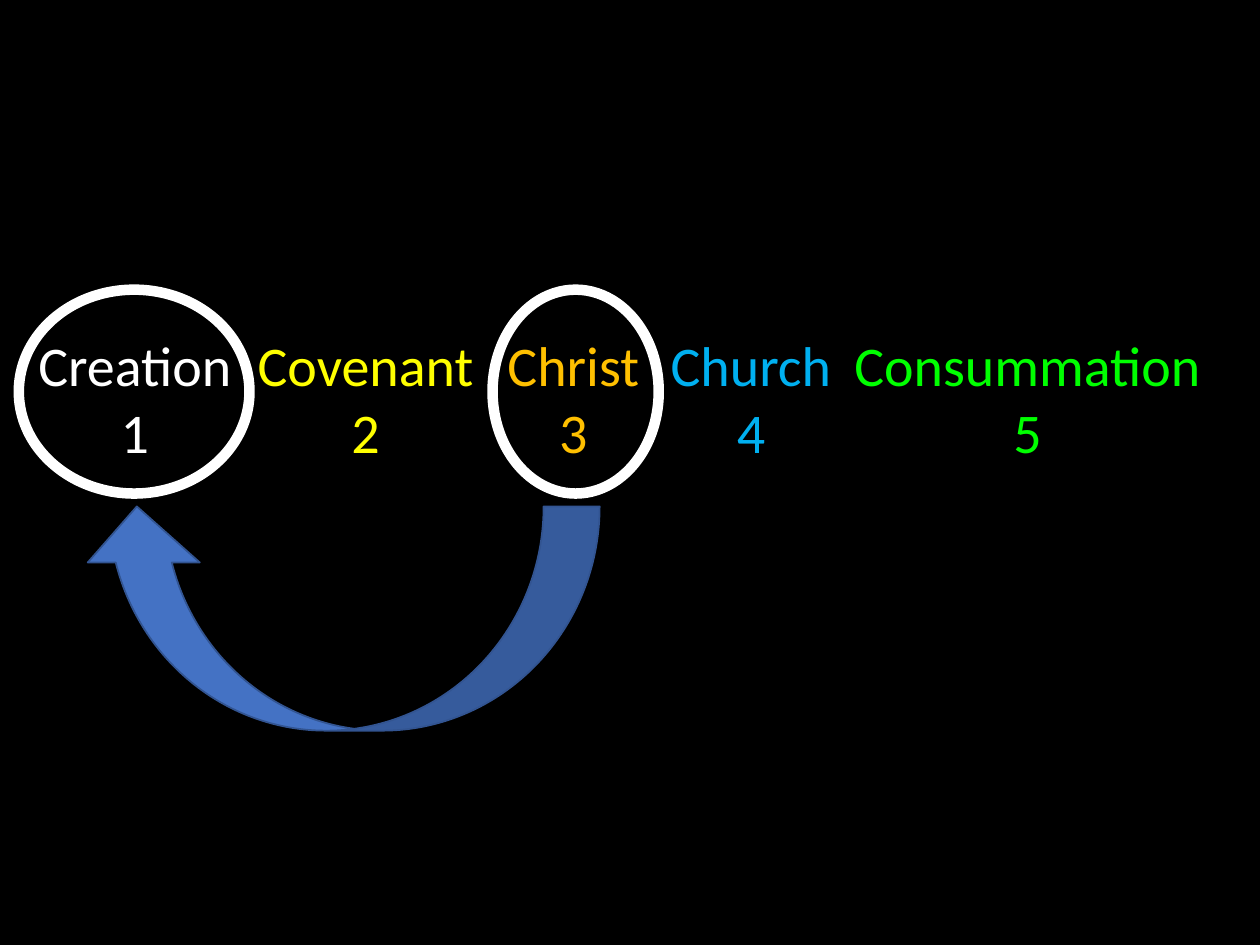
"""Build a slide of five themes, with an arrow from Christ back to Creation."""
from pptx import Presentation
from pptx.dml.color import RGBColor as RGB
from pptx.enum.shapes import MSO_SHAPE as Kind
from pptx.enum.text import MSO_AUTO_SIZE as Fit, PP_ALIGN as Align
from pptx.oxml.ns import qn
from pptx.util import Cm, Pt

BLACK = RGB(0x00, 0x00, 0x00)
WHITE = RGB(0xFF, 0xFF, 0xFF)
YELLOW = RGB(0xFF, 0xFF, 0x00)
GOLD = RGB(0xFF, 0xC0, 0x00)
SKY = RGB(0x00, 0xB0, 0xF0)
GREEN = RGB(0x00, 0xFF, 0x00)
BLUE = RGB(0x44, 0x72, 0xC4)
NAVY = RGB(0x32, 0x54, 0x91)

THEMES = [
    ("Creation", 0, 5.44, WHITE),
    ("Covenant", 4.65, 5.44, YELLOW),
    ("Christ", 8.84, 5.44, GOLD),
    ("Church", 12.42, 5.44, SKY),
    ("Consummation", 16.89, 7.65, GREEN),
]
TOP, HIGH = 6.53, 3
CHRIST = (9.93, 5.84, 3.35, 4.11)
ARROW = (1.63, 10.21, 10.46, 4.52)
START = (0.38, 5.84, 4.65, 4.11)


def write(slide, lines, area, color, size=32, font="Calibri"):
    box = slide.shapes.add_textbox(*map(Cm, area))
    frame = box.text_frame
    frame.word_wrap = True
    frame.auto_size = Fit.SHAPE_TO_FIT_TEXT
    frame.text = "\n".join(lines)
    for para in frame.paragraphs:
        para.alignment = Align.CENTER
        for run in para.runs:
            run.font.name = font
            run.font.size = Pt(size)
            run.font.color.rgb = color


def draw(slide, kind, area, line, width, fill=None):
    shape = slide.shapes.add_shape(kind, *map(Cm, area))
    shape.shadow.inherit = False
    if fill is None:
        shape.fill.background()
    else:
        shape.fill.solid()
        shape.fill.fore_color.rgb = fill
    shape.line.color.rgb = line
    shape.line.width = Pt(width)
    return shape


def main():
    deck = Presentation()
    deck.slide_width, deck.slide_height = Cm(25.4), Cm(19.05)
    slide = deck.slides.add_slide(deck.slide_layouts[6])
    back = slide.background.fill
    back.solid()
    back.fore_color.rgb = BLACK

    for num, (name, left, wide, color) in enumerate(THEMES, 1):
        write(slide, [name, str(num)], (left, TOP, wide, HIGH), color)

    draw(slide, Kind.OVAL, CHRIST, WHITE, 6)
    arrow = draw(slide, Kind.CURVED_UP_ARROW, ARROW, NAVY, 1, fill=BLUE)
    arrow.element.spPr.find(qn("a:xfrm")).set("flipH", "1")
    draw(slide, Kind.OVAL, START, WHITE, 6)

    deck.save("out.pptx")


if __name__ == "__main__":
    main()
